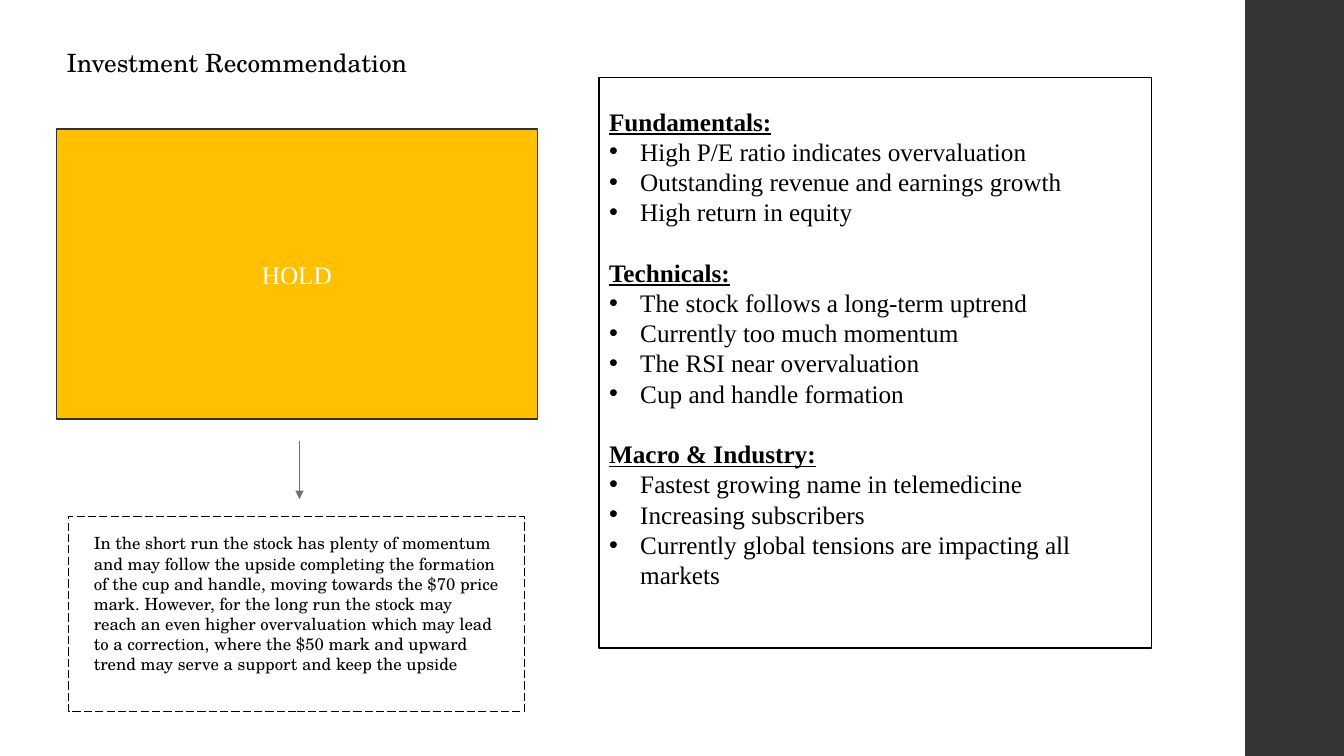
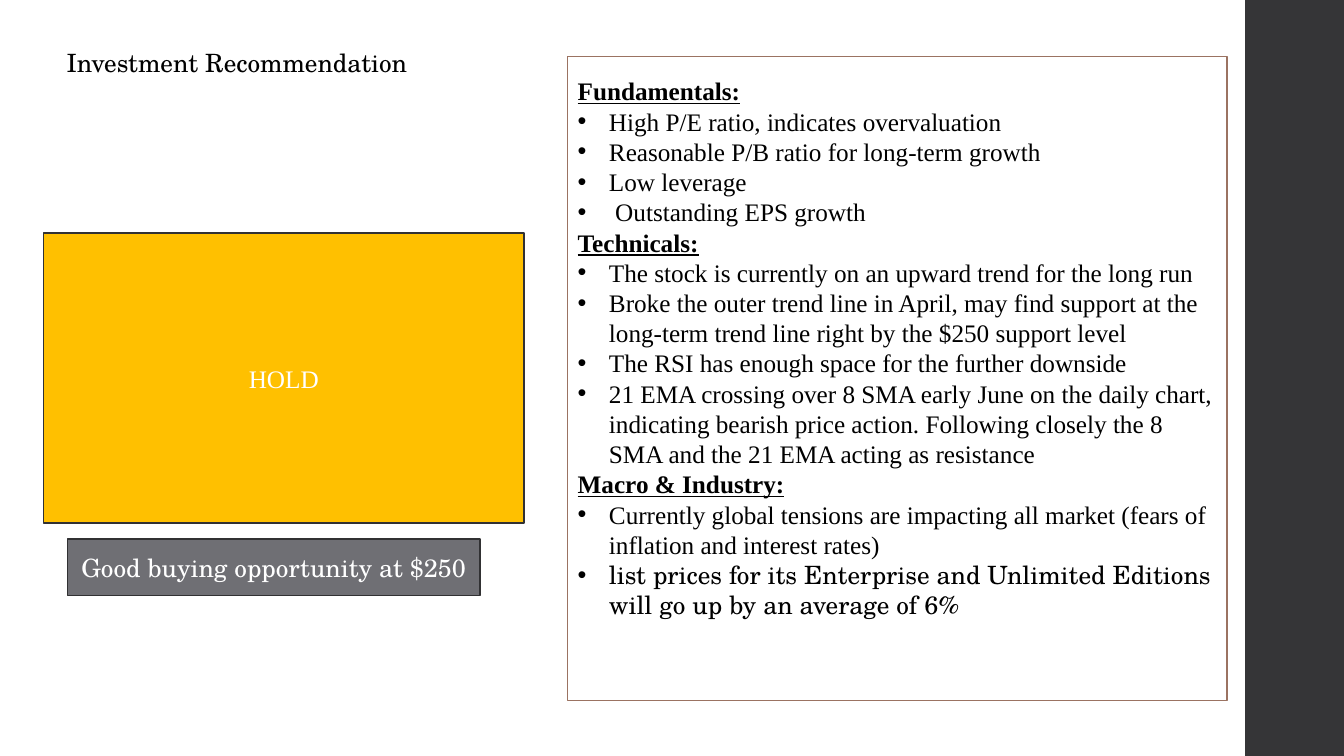
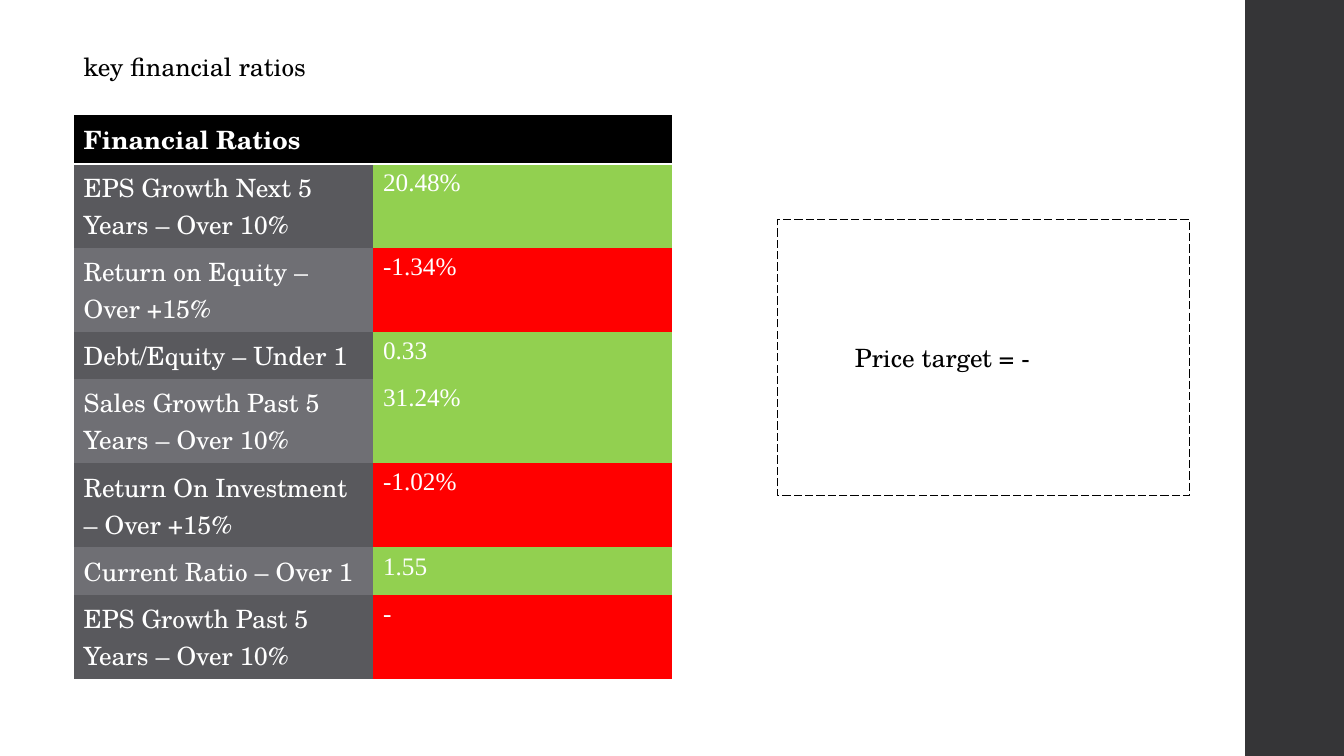
from dataclasses import dataclass

from lxml.etree import SubElement
from pptx import Presentation
from pptx.dml.color import RGBColor
from pptx.enum.dml import MSO_LINE
from pptx.enum.shapes import MSO_CONNECTOR, MSO_SHAPE
from pptx.enum.text import MSO_ANCHOR, MSO_AUTO_SIZE, PP_ALIGN
from pptx.oxml import parse_xml
from pptx.oxml.ns import nsdecls, qn
from pptx.util import Inches, Pt


@dataclass(frozen=True)
class Theme:
    serif: str = "TeX Gyre Schola"
    roman: str = "Times New Roman"
    black: str = "000000"
    white: str = "FFFFFF"
    band: str = "353537"
    outline: str = "313133"
    brown: str = "9B7362"
    gray: str = "6F6F74"
    dark_gray: str = "59595D"
    amber: str = "FFC000"
    green: str = "92D050"
    red: str = "FF0000"
    text: float = 18
    small: float = 12
    line_pitch: float = 21.6
    border: float = 1.1
    thin: float = 0.75


THEME = Theme()
TITLE_AND_BODY, TITLE_ONLY = 1, 5
NO_GRID_STYLE = "{2D5ABB26-0587-4C30-8999-92F81FD0307C}"

SHORT_RUN_VIEW = (
    "In the short run the stock has plenty of momentum and may follow the upside "
    "completing the formation of the cup and handle, moving towards the $70 price "
    "mark. However, for the long run the stock may reach an even higher overvaluation "
    "which may lead to a correction, where the $50 mark and upward trend may serve a "
    "support and keep the upside"
)
TELEMEDICINE_REASONS = {
    "Fundamentals:": [
        "High P/E ratio indicates overvaluation",
        "Outstanding revenue and earnings growth",
        "High return in equity",
    ],
    "Technicals:": [
        "The stock follows a long-term uptrend",
        "Currently too much momentum",
        "The RSI near overvaluation",
        "Cup and handle formation",
    ],
    "Macro & Industry:": [
        "Fastest growing name in telemedicine",
        "Increasing subscribers",
        "Currently global tensions are impacting all markets",
    ],
}
PRICE_RISE = ("list prices for its Enterprise and Unlimited Editions will go up "
              "by an average of 6%")
SOFTWARE_REASONS = {
    "Fundamentals:": [
        "High P/E ratio, indicates overvaluation",
        "Reasonable P/B ratio for long-term growth",
        "Low leverage",
        " Outstanding EPS growth",
    ],
    "Technicals:": [
        "The stock is currently on an upward trend for the long run",
        "Broke the outer trend line in April, may find support at the long-term "
        "trend line right by the $250 support level",
        "The RSI has enough space for the further downside",
        "21 EMA crossing over 8 SMA early June on the daily chart, indicating bearish "
        "price action. Following closely the 8 SMA and the 21 EMA acting as resistance",
    ],
    "Macro & Industry:": [
        "Currently global tensions are impacting all market (fears of inflation "
        "and interest rates)",
        PRICE_RISE,
    ],
}
# Label, value, whether the threshold is met, row height
RATIOS = [
    ("EPS Growth Next 5 Years – Over 10%", "20.48%", True, 0.77),
    ("Return on Equity – Over +15%", "-1.34%", False, 0.77),
    ("Debt/Equity – Under 1", "0.33", True, 0.45),
    ("Sales Growth Past 5 Years – Over 10%", "31.24%", True, 0.77),
    ("Return On Investment – Over +15%", "-1.02%", False, 0.77),
    ("Current Ratio – Over 1", "1.55", True, 0.45),
    ("EPS Growth Past 5 Years – Over 10%", "-", False, 0.77),
]


def color(code):
    return RGBColor.from_string(code)


def lengths(box):
    return [Inches(value) for value in box]


def place(shape, box):
    shape.left, shape.top, shape.width, shape.height = lengths(box)


def style_runs(paragraph, font=THEME.serif, ink=THEME.black, size=THEME.text, bold=False):
    for run in paragraph.runs:
        run.font.name = font
        run.font.size = Pt(size)
        run.font.bold = bold
        run.font.color.rgb = color(ink)


def paint(shape, fill, line, width=THEME.border):
    if fill:
        shape.fill.solid()
        shape.fill.fore_color.rgb = color(fill)
    else:
        shape.fill.background()
    if line:
        shape.line.color.rgb = color(line)
        shape.line.width = Pt(width)
    else:
        shape.line.fill.background()


def add_box(slide, box, fill, line=None, width=THEME.border):
    rectangle = slide.shapes.add_shape(MSO_SHAPE.RECTANGLE, *lengths(box))
    rectangle.shadow.inherit = False
    paint(rectangle, fill, line, width)
    return rectangle


def add_master_band(prs, slide):
    """Build the right-hand band and move it behind everything on the master."""
    band = add_box(slide, (12.35, 0, 1, 7.5), THEME.band)
    band.element.nvSpPr.cNvPr.set("id", "20")
    prs.slide_master.shapes.element.insert(2, band.element)


def add_slide(prs, layout, title, box):
    slide = prs.slides.add_slide(prs.slide_layouts[layout])
    heading = slide.shapes.title
    place(heading, box)
    frame = heading.text_frame
    frame.text = title
    frame.auto_size = MSO_AUTO_SIZE.NONE
    frame.vertical_anchor = MSO_ANCHOR.TOP
    frame.paragraphs[0].alignment = PP_ALIGN.LEFT
    style_runs(frame.paragraphs[0])
    return slide


def add_label(slide, box, text, fill, font):
    label = add_box(slide, box, fill, THEME.outline)
    label.text_frame.text = text
    label.text_frame.paragraphs[0].alignment = PP_ALIGN.CENTER
    style_runs(label.text_frame.paragraphs[0], font, THEME.white)


def add_dashed_note(slide, box, text, size, insets, anchor):
    note = add_box(slide, box, None, THEME.black, THEME.thin)
    note.line.dash_style = MSO_LINE.LONG_DASH
    frame = note.text_frame
    frame.text = text
    frame.word_wrap = True
    frame.vertical_anchor = anchor
    side, top = lengths(insets)
    frame.margin_left = frame.margin_right = side
    frame.margin_top = top
    frame.paragraphs[0].alignment = PP_ALIGN.LEFT
    style_runs(frame.paragraphs[0], size=size)


def add_down_arrow(slide, x, top, length):
    arrow = slide.shapes.add_connector(
        MSO_CONNECTOR.STRAIGHT, *lengths((x, top, x, top + length)))
    arrow.line.color.rgb = color(THEME.gray)
    arrow.line.width = Pt(THEME.thin)
    properties = arrow.element.spPr
    SubElement(properties.find(qn("a:ln")), qn("a:tailEnd"), type="triangle")
    SubElement(properties, qn("a:effectLst"))


def set_bullet(paragraph, bulleted):
    properties = paragraph._p.get_or_add_pPr()
    indent = Inches(0.31) if bulleted else 0
    properties.set("marL", str(indent))
    properties.set("indent", str(-indent))
    if bulleted:
        SubElement(properties, qn("a:buFont"), typeface="Arial")
        SubElement(properties, qn("a:buChar"), char="•")
    else:
        SubElement(properties, qn("a:buNone"))


def fill_reasons(slide, box, groups, line, top_inset, group_gap=0):
    """Outlined list in the body placeholder: underlined headings with bullets."""
    panel = slide.placeholders[1]
    place(panel, box)
    paint(panel, THEME.white, line)
    frame = panel.text_frame
    frame.auto_size = MSO_AUTO_SIZE.NONE
    frame.vertical_anchor = MSO_ANCHOR.TOP
    frame.margin_top = Inches(top_inset)
    entries = [(text, text == heading)
               for heading, points in groups.items() for text in (heading, *points)]
    frame.text = "\n".join(text for text, _ in entries)
    for index, (paragraph, (text, is_heading)) in enumerate(zip(frame.paragraphs, entries)):
        set_bullet(paragraph, not is_heading)
        paragraph.line_spacing = Pt(THEME.line_pitch)
        paragraph.space_before = Pt(group_gap if is_heading and index else 0)
        style_runs(paragraph, THEME.serif if text == PRICE_RISE else THEME.roman,
                   bold=is_heading)
        paragraph.runs[0].font.underline = is_heading


def fill_cell(cell, text, fill, font=THEME.serif, bold=False):
    cell.fill.solid()
    cell.fill.fore_color.rgb = color(fill)
    cell.text_frame.text = text
    style_runs(cell.text_frame.paragraphs[0], font, THEME.white, bold=bold)


def underline_cell(cell):
    cell._tc.get_or_add_tcPr().insert(0, parse_xml(
        f'<a:lnB {nsdecls("a")} w="{Pt(2)}"><a:solidFill>'
        f'<a:srgbClr val="{THEME.white}"/></a:solidFill></a:lnB>'))


def add_ratio_table(slide, box):
    table = slide.shapes.add_table(len(RATIOS) + 1, 2, *lengths(box)).table
    table.horz_banding = False
    table._tbl.tblPr.find(qn("a:tableStyleId")).text = NO_GRID_STYLE
    # Header
    table.rows[0].height = Inches(0.45)
    for column, text in enumerate(("Financial Ratios", "")):
        header = table.cell(0, column)
        fill_cell(header, text, THEME.black, bold=True)
        underline_cell(header)
    # Ratios, coloured by whether they pass
    for row, (label, value, passed, height) in enumerate(RATIOS, start=1):
        table.rows[row].height = Inches(height)
        fill_cell(table.cell(row, 0), label, THEME.dark_gray if row % 2 else THEME.gray)
        fill_cell(table.cell(row, 1), value, THEME.green if passed else THEME.red,
                  THEME.roman)


def build_telemedicine(prs):
    slide = add_slide(prs, TITLE_AND_BODY, "Investment Recommendation", (0.56, 0.42, 7.95, 0.4))
    add_master_band(prs, slide)
    add_label(slide, (0.56, 1.28, 4.77, 2.88), "HOLD", THEME.amber, THEME.roman)
    fill_reasons(slide, (5.94, 0.77, 5.48, 5.66), TELEMEDICINE_REASONS, THEME.black,
                 0.28, THEME.line_pitch)
    add_down_arrow(slide, 2.97, 4.38, 0.57)
    add_dashed_note(slide, (0.68, 5.12, 4.52, 1.94), SHORT_RUN_VIEW, THEME.small,
                    (0.25, 0.17), MSO_ANCHOR.TOP)


def build_software(prs):
    slide = add_slide(prs, TITLE_AND_BODY, "Investment Recommendation", (0.56, 0.42, 7.95, 0.4))
    add_label(slide, (0.43, 2.31, 4.77, 2.88), "HOLD", THEME.amber, THEME.roman)
    fill_reasons(slide, (5.63, 0.56, 6.54, 6.39), SOFTWARE_REASONS, THEME.brown, 0.19)
    add_label(slide, (0.67, 5.35, 4.09, 0.56), "Good buying opportunity at $250",
              THEME.gray, THEME.serif)


def build_ratios(prs):
    slide = add_slide(prs, TITLE_ONLY, "key financial ratios", (0.73, 0.46, 7.43, 0.4))
    add_ratio_table(slide, (0.73, 1.14, 5.94, 5.22))
    add_dashed_note(slide, (7.71, 2.18, 4.09, 2.74), "Price target = -", THEME.text,
                    (0.77, 0.05), MSO_ANCHOR.MIDDLE)


def main():
    prs = Presentation()
    prs.slide_width, prs.slide_height = Inches(13.33), Inches(7.5)
    build_telemedicine(prs)
    build_software(prs)
    build_ratios(prs)
    prs.save("out.pptx")


if __name__ == "__main__":
    main()
